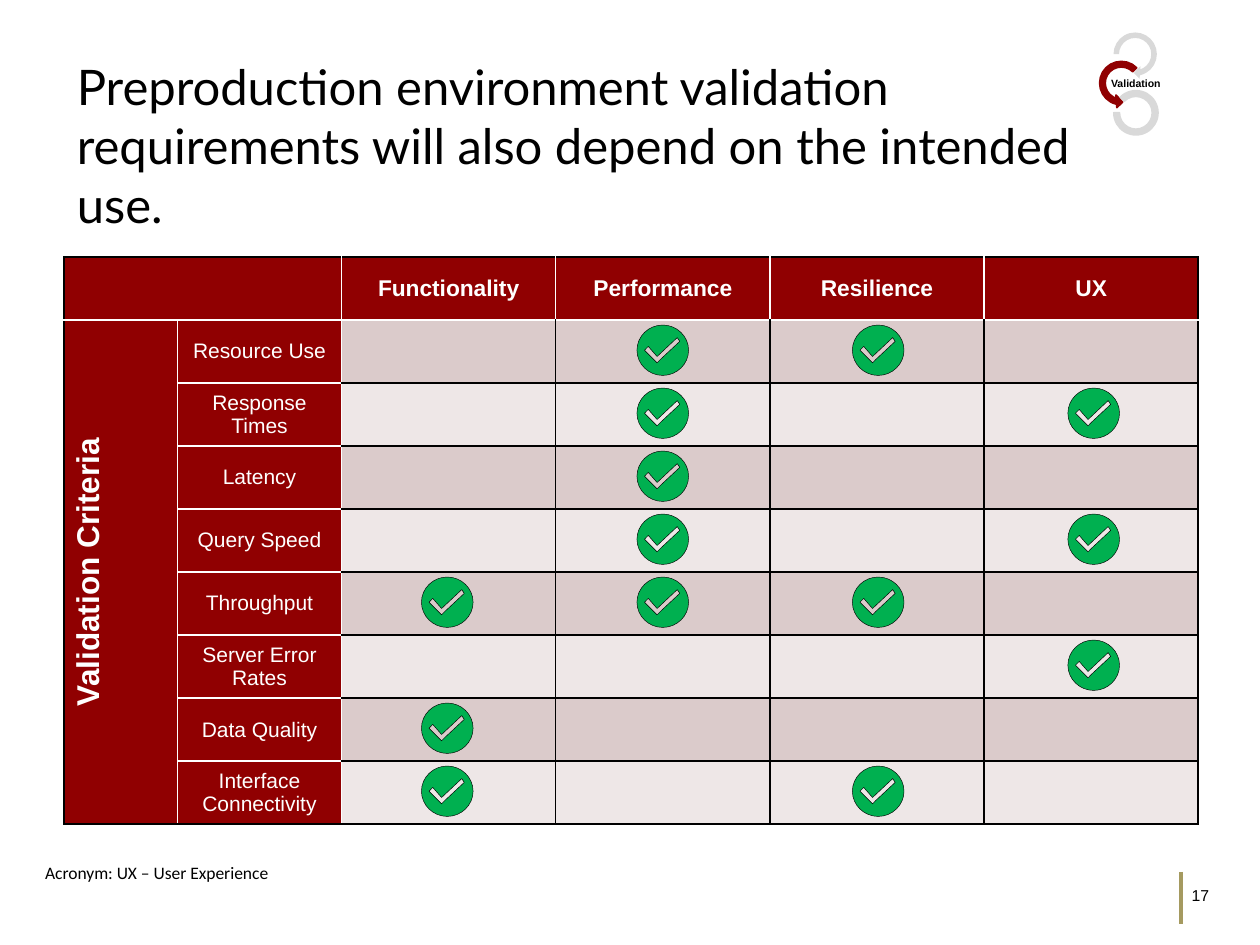
import itertools

import lxml.etree
import pptx
import pptx.dml.color
import pptx.enum.shapes
import pptx.enum.text
import pptx.oxml.ns
import pptx.util

RED = pptx.dml.color.RGBColor(0x90, 0x00, 0x01)
WHITE = pptx.dml.color.RGBColor(0xFF, 0xFF, 0xFF)
BLACK = pptx.dml.color.RGBColor(0x00, 0x00, 0x00)
GREY = pptx.dml.color.RGBColor(0xD9, 0xD9, 0xD9)
GREEN = pptx.dml.color.RGBColor(0x00, 0xB0, 0x50)
GOLD = pptx.dml.color.RGBColor(0xA5, 0x9A, 0x60)
BANDS = (pptx.dml.color.RGBColor(0xEE, 0xE7, 0xE7),
         pptx.dml.color.RGBColor(0xDB, 0xCB, 0xCB))

HEADS = ("Functionality", "Performance", "Resilience", "UX")
# Each criterion with the columns in HEADS that it applies to.
CRITERIA = (
    ("Resource Use", (1, 2)),
    ("Response Times", (1, 3)),
    ("Latency", (1,)),
    ("Query Speed", (1, 3)),
    ("Throughput", (0, 1, 2)),
    ("Server Error Rates", (3,)),
    ("Data Quality", (0,)),
    ("Interface Connectivity", (0, 2)),
)
WIDTHS = (0.9, 1.3) + (1.7,) * len(HEADS)
PITCH = 0.5
TICK = ((0.32, 0.1), (0.16, 0.25), (0.09, 0.17), (0.06, 0.2),
        (0.16, 0.3), (0.19, 0.27), (0.34, 0.13))
# Top, right, bottom and left of a disc, as parts of its half width and height.
DISC = ((0, -1), (1, 0), (0, 1), (-1, 0), (0, -1))
BEND = 0.55

Inches = pptx.util.Inches
Pt = pptx.util.Pt
qn = pptx.oxml.ns.qn
MIDDLE = pptx.enum.text.MSO_ANCHOR.MIDDLE
CENTER = pptx.enum.text.PP_ALIGN.CENTER
SHAPE = pptx.enum.shapes.MSO_SHAPE


def write(par, text, size, face="Arial", color=BLACK, bold=False):
    run = par.add_run()
    run.text = text
    run.font.size = Pt(size)
    run.font.name = face
    run.font.bold = bold
    run.font.color.rgb = color


def add_text(shapes, box, text, size, face="Arial", bold=False):
    frame = shapes.add_textbox(*map(Inches, box)).text_frame
    frame.word_wrap = True
    write(frame.paragraphs[0], text, size, face, bold=bold)
    return frame


def paint(shape, fill, line=None, width=1):
    shape.shadow.inherit = False
    shape.fill.solid()
    shape.fill.fore_color.rgb = fill
    if line is None:
        shape.line.fill.background()
    else:
        shape.line.color.rgb = line
        shape.line.width = Pt(width)


def add_title(slide, box):
    title = slide.shapes.title
    title.left, title.top, title.width, title.height = map(Inches, box)
    frame = title.text_frame
    frame.word_wrap = True
    frame.auto_size = pptx.enum.text.MSO_AUTO_SIZE.SHAPE_TO_FIT_TEXT
    frame.vertical_anchor = pptx.enum.text.MSO_ANCHOR.TOP
    par = frame.paragraphs[0]
    par.alignment = pptx.enum.text.PP_ALIGN.LEFT
    write(par, "Preproduction environment validation requirements "
          "will also depend on the intended use.", 28, "Lato")


def add_cycle(slide, left, top):
    """Place the small chain of rings that names the current step."""
    shapes = slide.shapes.add_group_shape().shapes
    rings = (
        (SHAPE.CIRCULAR_ARROW, 0.11, 0, 0.4,
         (0.11, 11.42, 45, 108, 0.125), GREY, None),
        (SHAPE.LEFT_CIRCULAR_ARROW, 0, 0.23, 0.4,
         (0.11, 11.42, 63, 189, 0.125), RED, RED),
        (SHAPE.BLOCK_ARC, 0.14, 0.49, 0.35, (135, 108, 0.127), GREY, GREY),
    )
    for kind, dx, dy, size, turns, fill, line in rings:
        ring = shapes.add_shape(kind, Inches(left + dx), Inches(top + dy),
                                Inches(size), Inches(size))
        for i, turn in enumerate(turns):
            ring.adjustments[i] = turn
        paint(ring, fill, line)
    frame = add_text(shapes, (left + 0.01, top + 0.33, 0.61, 0.21),
                     "Validation", 6, bold=True)
    frame.margin_left = frame.margin_right = 0
    frame.margin_top = frame.margin_bottom = 0
    frame.vertical_anchor = MIDDLE
    frame.paragraphs[0].alignment = CENTER
    frame.paragraphs[0].line_spacing = 0.9


def is_red(row, col):
    return row == 0 or col < 2


def set_edges(cell, row, col):
    """Draw black edges, but white ones inside the table beside red cells."""
    below = row + cell.span_height
    after = col + cell.span_width
    sides = (("a:lnL", row, col - 1), ("a:lnR", row, after),
             ("a:lnT", row - 1, col), ("a:lnB", below, col))
    props = cell._tc.get_or_add_tcPr()
    for tag, y, x in sides:
        inner = 0 <= y <= len(CRITERIA) and 0 <= x < len(WIDTHS)
        white = inner and (is_red(row, col) or is_red(y, x))
        edge = lxml.etree.SubElement(props, qn(tag), w=str(Pt(1)))
        fill = lxml.etree.SubElement(edge, qn("a:solidFill"))
        lxml.etree.SubElement(fill, qn("a:srgbClr"),
                              val=str(WHITE if white else BLACK))


def label(cell, text, size, bold):
    cell.vertical_anchor = MIDDLE
    par = cell.text_frame.paragraphs[0]
    par.alignment = CENTER
    write(par, text, size, color=WHITE, bold=bold)


def round_off(shape):
    """Turn the four straight sides that end the outline into a disc."""
    half = (shape.width / 2, shape.height / 2)
    sides = list(shape._element.iter(qn("a:lnTo")))[-4:]
    for side, (start, end) in zip(sides, itertools.pairwise(DISC)):
        bends = ([a + BEND * b for a, b in zip(start, end)],
                 [b + BEND * a for a, b in zip(start, end)])
        side.tag = qn("a:cubicBezTo")
        for i, bend in enumerate(bends):
            x, y = (str(round(h * (1 + b))) for h, b in zip(half, bend))
            side.insert(i, side.makeelement(qn("a:pt"), x=x, y=y))


def add_mark(slide, x, y):
    """Place a green disc, with a tick cut out of it, centred on x, y."""
    wide, high = 0.205, 0.2
    tick = [(Inches(x - wide + dx), Inches(y - high + dy)) for dx, dy in TICK]
    disc = [(Inches(x + wide * dx), Inches(y + high * dy)) for dx, dy in DISC]
    build = slide.shapes.build_freeform(*tick[0])
    build.add_line_segments(tick[1:])
    build.move_to(*disc[0])
    build.add_line_segments(disc[1:], close=False)
    mark = build.convert_to_shape()
    round_off(mark)
    paint(mark, GREEN, BLACK, 0.25)


def add_matrix(slide, left, top):
    count = len(CRITERIA) + 1
    table = slide.shapes.add_table(
        count, len(WIDTHS), Inches(left), Inches(top),
        Inches(sum(WIDTHS)), Inches(PITCH * count)).table
    for col, width in zip(table.columns, WIDTHS):
        col.width = Inches(width)
    for row in table.rows:
        row.height = Inches(PITCH)
    table.cell(0, 0).merge(table.cell(0, 1))
    table.cell(1, 0).merge(table.cell(count - 1, 0))
    for row in range(count):
        for col in range(len(WIDTHS)):
            cell = table.cell(row, col)
            set_edges(cell, row, col)
            cell.fill.solid()
            cell.fill.fore_color.rgb = RED if is_red(row, col) else BANDS[row % 2]

    for col, head in enumerate(HEADS, 2):
        label(table.cell(0, col), head, 13, True)
    side = table.cell(1, 0)
    label(side, "Validation Criteria", 18, True)
    side._tc.get_or_add_tcPr().set("vert", "vert270")
    for row, (name, marks) in enumerate(CRITERIA, 1):
        label(table.cell(row, 1), name, 12, False)
        for mark in marks:
            add_mark(slide, left + 3.04 + 1.71 * mark,
                     top + PITCH * (row + 0.5) - 0.01)


def add_footer(slide, left, top):
    add_text(slide.shapes, (left, top, 8.16, 0.6),
             "Acronym: UX – User Experience", 10, "Calibri")
    add_text(slide.shapes, (left + 9.1, top + 0.19, 0.39, 0.27), "17", 9)
    x = Inches(left + 9.11)
    rule = slide.shapes.add_connector(
        pptx.enum.shapes.MSO_CONNECTOR.STRAIGHT,
        x, Inches(top + 0.13), x, Inches(top + 0.54))
    rule.line.color.rgb = GOLD
    rule.line.width = Pt(2.25)
    lxml.etree.SubElement(rule._element.spPr, qn("a:effectLst"))


def main():
    deck = pptx.Presentation()
    deck.slide_width, deck.slide_height = Inches(10), Inches(7.5)
    slide = deck.slides.add_slide(deck.slide_layouts[5])
    add_title(slide, (0.51, 0.4, 8.52, 1.38))
    add_cycle(slide, 8.7, 0.23)
    add_matrix(slide, 0.51, 2.04)
    add_footer(slide, 0.26, 6.79)
    deck.save("out.pptx")


if __name__ == "__main__":
    main()
